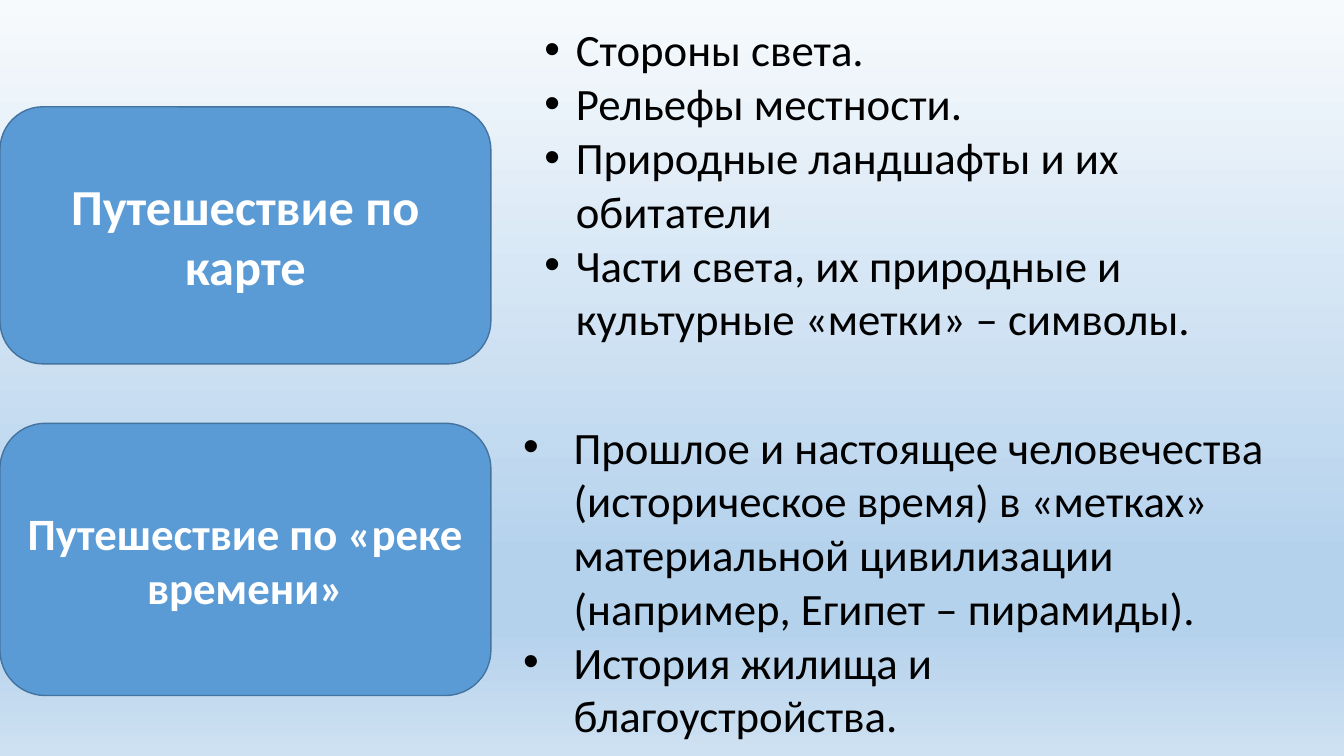
from lxml import etree
from pptx import Presentation
from pptx import util as u
from pptx.dml import color
from pptx.enum import shapes, text
from pptx.oxml import ns

BLUE = color.RGBColor(0x5B, 0x9B, 0xD5)
OUTLINE = color.RGBColor(0x43, 0x73, 0x9E)
WHITE = color.RGBColor(0xFF, 0xFF, 0xFF)
BLACK = color.RGBColor(0x00, 0x00, 0x00)
SKY_TOP = color.RGBColor(0xF7, 0xFA, 0xFD)
SKY_DEEP = color.RGBColor(0xB5, 0xD2, 0xEC)
SKY_BOTTOM = color.RGBColor(0xCE, 0xE1, 0xF2)


class SlideBuilder:
    font = "Calibri"
    list_size = 32
    topic_width = 350.64

    def __init__(self, slide):
        self.slide = slide

    def background(self, stops):
        fill = self.slide.background.fill
        fill.gradient()
        fill.gradient_angle = 270
        stop_list = next(self.slide.element.iter(ns.qn("a:gsLst")))
        for stop in list(stop_list):
            stop_list.remove(stop)
        for percent, shade in stops:
            stop = etree.SubElement(stop_list, ns.qn("a:gs"), pos=str(percent * 1000))
            etree.SubElement(stop, ns.qn("a:srgbClr"), val=str(shade))

    def style(self, para, size, shade, bold=False):
        for span in para.runs:
            span.font.name = self.font
            span.font.size = u.Pt(size)
            span.font.bold = bold
            span.font.color.rgb = shade

    def topic(self, label, top, height, size):
        box = self.slide.shapes.add_shape(
            shapes.MSO_SHAPE.FLOWCHART_ALTERNATE_PROCESS,
            u.Pt(0), u.Pt(top), u.Pt(self.topic_width), u.Pt(height))
        box.shadow.inherit = False
        box.fill.solid()
        box.fill.fore_color.rgb = BLUE
        box.line.color.rgb = OUTLINE
        box.line.width = u.Pt(1)
        frame = box.text_frame
        frame.text = label
        frame.word_wrap = True
        frame.vertical_anchor = text.MSO_ANCHOR.MIDDLE
        para = frame.paragraphs[0]
        para.alignment = text.PP_ALIGN.CENTER
        self.style(para, size, WHITE, bold=True)

    def bullets(self, body, items, left, top, width, height, indent):
        body.left, body.top = u.Pt(left), u.Pt(top)
        body.width, body.height = u.Pt(width), u.Pt(height)
        frame = body.text_frame
        frame.text = "\n".join(items)
        frame.word_wrap = True
        frame.auto_size = text.MSO_AUTO_SIZE.SHAPE_TO_FIT_TEXT
        frame.vertical_anchor = text.MSO_ANCHOR.TOP
        for para in frame.paragraphs:
            para.alignment = text.PP_ALIGN.LEFT
            para.line_spacing = 1.0
            para.space_before = para.space_after = u.Pt(0)
            properties = para._p.get_or_add_pPr()
            properties.set("marL", str(u.Pt(indent)))
            properties.set("indent", str(-u.Pt(indent)))
            etree.SubElement(properties, ns.qn("a:buFont"), typeface="Arial")
            etree.SubElement(properties, ns.qn("a:buChar"), char="•")
            self.style(para, self.list_size, BLACK)


def main():
    deck = Presentation()
    deck.slide_width, deck.slide_height = u.Pt(960), u.Pt(540)
    page = deck.slides.add_slide(deck.slide_layouts.get_by_name("Two Content"))
    title = page.shapes.title.element
    title.getparent().remove(title)
    map_list, time_list = page.placeholders

    builder = SlideBuilder(page)
    builder.background([(0, SKY_TOP), (74, SKY_DEEP), (83, SKY_DEEP), (100, SKY_BOTTOM)])
    builder.topic("Путешествие по карте", 76.32, 183.6, 36)
    builder.topic("Путешествие по «реке времени»", 302.4, 194.4, 32)
    builder.bullets(map_list, [
        "Стороны света.",
        "Рельефы местности.",
        "Природные ландшафты и их обитатели",
        "Части света, их природные и культурные «метки» – символы.",
    ], 381.6, 12.24, 563.76, 278.64, 22.5)
    builder.bullets(time_list, [
        "Прошлое и настоящее человечества (историческое время) в «метках» "
        "материальной цивилизации (например, Египет – пирамиды).",
        "История жилища и благоустройства.",
    ], 366.48, 295.92, 544.32, 239.76, 36)
    deck.save("out.pptx")


if __name__ == "__main__":
    main()
